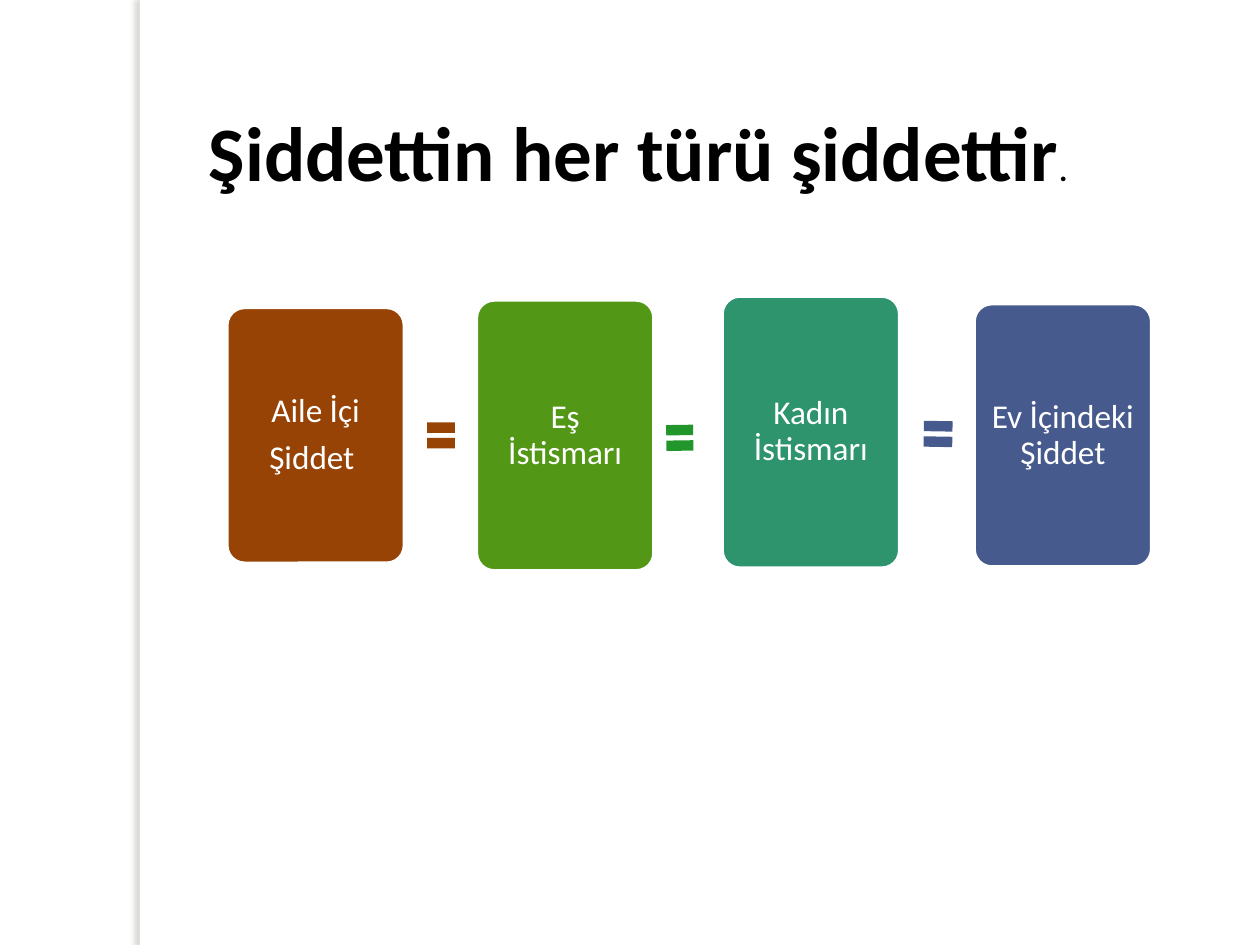
from lxml import etree
from pptx import Presentation
from pptx import util as u
from pptx.dml.color import RGBColor
from pptx.enum import shapes, text
from pptx.oxml.ns import qn

WHITE = "FFFFFF"


def colour(hex_value):
    return RGBColor.from_string(hex_value)


def assign(target, values):
    for name, value in values.items():
        setattr(target, name, value)


class SlideBuilder:
    font = "Calibri"
    card_size = 19
    card_width = 101.5
    card_frame = {
        "word_wrap": True,
        "vertical_anchor": text.MSO_ANCHOR.MIDDLE,
        "margin_left": u.Pt(5.76),
        "margin_right": u.Pt(5.76),
        "margin_top": u.Pt(5.76),
        "margin_bottom": u.Pt(5.76),
    }
    card_paragraph = {
        "alignment": text.PP_ALIGN.CENTER,
        "line_spacing": 0.9,
        "space_after": u.Pt(0.35 * card_size),
    }

    def __init__(self, slide):
        self.slide = slide

    def block(self, preset, box, fill):
        block = self.slide.shapes.add_shape(preset, *map(u.Pt, box))
        block.shadow.inherit = False
        block.fill.solid()
        block.fill.fore_color.rgb = colour(fill)
        block.line.fill.background()
        return block

    def add_words(self, paragraph, words, size, ink, bold=False):
        run = paragraph.add_run()
        run.text = words
        assign(run.font, {"name": self.font, "size": u.Pt(size), "bold": bold})
        run.font.color.rgb = colour(ink)

    def rail(self, box):
        rail = self.block(shapes.MSO_SHAPE.RECTANGLE, box, WHITE)
        effects = rail._element.spPr.find(qn("a:effectLst"))
        shadow = etree.SubElement(
            effects, qn("a:outerShdw"), blurRad=str(u.Pt(3)), dist=str(u.Pt(3)),
            dir="10800000", algn="tl", rotWithShape="0")
        tint = etree.SubElement(shadow, qn("a:srgbClr"), val="736F63")
        etree.SubElement(tint, qn("a:alpha"), val="25000")

    def title(self, box, parts):
        title = self.slide.shapes.add_textbox(*map(u.Pt, box))
        assign(title.text_frame, {
            "word_wrap": True,
            "auto_size": text.MSO_AUTO_SIZE.SHAPE_TO_FIT_TEXT,
        })
        for words, size in parts:
            self.add_words(title.text_frame.paragraphs[0], words, size, "000000", True)

    def card(self, left, top, height, fill, lines):
        card = self.block(shapes.MSO_SHAPE.ROUNDED_RECTANGLE,
                          (left, top, self.card_width, height), fill)
        card.adjustments[0] = 0.1
        card.line.color.rgb = colour(WHITE)
        card.line.width = u.Pt(2)
        frame = card.text_frame
        assign(frame, self.card_frame)
        for index, words in enumerate(lines):
            paragraph = frame.add_paragraph() if index else frame.paragraphs[0]
            assign(paragraph, self.card_paragraph)
            self.add_words(paragraph, words, self.card_size, WHITE)

    def equals(self, left, top, width, fill, rotation):
        sign = self.block(shapes.MSO_SHAPE.MATH_EQUAL, (left, top, width, 25.2), fill)
        sign.rotation = rotation


def main():
    deck = Presentation()
    assign(deck, {"slide_width": u.Pt(720), "slide_height": u.Pt(540)})
    builder = SlideBuilder(deck.slides.add_slide(deck.slide_layouts[6]))

    builder.rail((79.9, 0, 5.8, 540))

    forms_of_violence = [
        (129.6, 175.7, 146.2, "964305", ["Aile İçi", "Şiddet "]),
        (272.2, 171.4, 154.8, "539717", ["Eş İstismarı"]),
        (412.6, 169.2, 155.5, "2D946E", ["Kadın İstismarı"]),
        (556.6, 173.5, 150.5, "475A8D", ["Ev İçindeki Şiddet"]),
    ]
    for form in forms_of_violence:
        builder.card(*form)

    equal_signs = [
        (241.2, 236.2, 21.6, "964305", 0),
        (378, 237.6, 20.9, "22962B", 359.1),
        (524.9, 235.4, 22.3, "475A8D", 0.9),
    ]
    for sign in equal_signs:
        builder.equals(*sign)

    builder.title((112.3, 56.2, 596.2, 60.5),
                  [("Şiddettin her türü şiddettir", 44), (".", 18)])
    deck.save("out.pptx")


if __name__ == "__main__":
    main()
